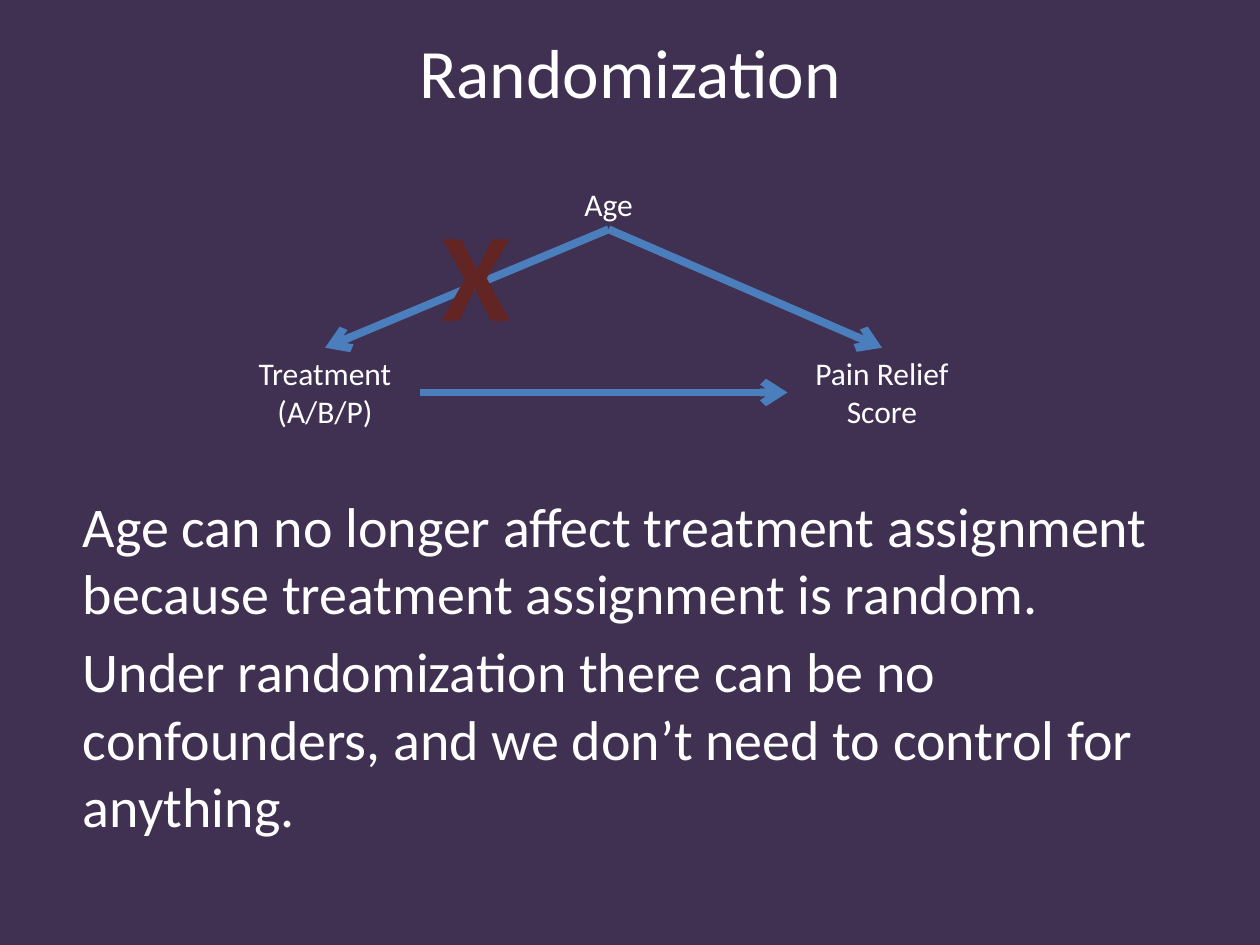
"""Build the Randomization slide: a causal triangle with one path crossed out."""
import pptx
import pptx.dml.color
import pptx.enum.shapes
import pptx.enum.text
import pptx.oxml.ns
import pptx.util
from lxml import etree

WHITE, PURPLE, BLUE, RED = "FFFFFF", "403152", "4B7EBC", "632523"
ALIGN = pptx.enum.text.PP_ALIGN
ANCHOR = pptx.enum.text.MSO_ANCHOR
TOP, LEFT, BOTTOM, RIGHT = range(4)

TITLE = "Randomization"
BODY = [
    "Age can no longer affect treatment assignment because treatment assignment is random.",
    "Under randomization there can be no confounders, and we don’t need to control for anything.",
]
NODE_W = 1.5
NODES = {
    "age": (["Age"], (4.08, 1.42, NODE_W, 0.4)),
    "treatment": (["Treatment", "(A/B/P)"], (1.83, 2.76, NODE_W, 0.71)),
    "outcome": (["Pain Relief Score"], (6.25, 2.76, NODE_W, 0.71)),
}
ARROWS = [
    ("age", BOTTOM, "outcome", TOP),
    ("age", BOTTOM, "treatment", TOP),
    ("treatment", RIGHT, "outcome", LEFT),
]


def color(value):
    return pptx.dml.color.RGBColor.from_string(value)


def place(shape, box):
    for name, value in zip(("left", "top", "width", "height"), box):
        setattr(shape, name, pptx.util.Inches(value))


def write(shape, lines, size, rgb=WHITE, align=ALIGN.CENTER, anchor=ANCHOR.TOP, before=0, bold=False):
    tf = shape.text_frame
    tf.word_wrap, tf.vertical_anchor = True, anchor
    tf.text = "\n".join(lines)
    for p in tf.paragraphs:
        p.alignment, p.space_before = align, pptx.util.Pt(before)
        font = p.runs[0].font
        for name, value in {"name": "Calibri", "size": pptx.util.Pt(size), "bold": bold}.items():
            setattr(font, name, value)
        font.color.rgb = color(rgb)


def add_text(s, lines, box, size, **formats):
    sp = s.shapes.add_textbox(*map(pptx.util.Inches, box))
    write(sp, lines, size, **formats)
    return sp


def add_arrow(s, start, start_side, end, end_side):
    c = s.shapes.add_connector(pptx.enum.shapes.MSO_CONNECTOR.STRAIGHT, 0, 0, 0, 0)
    c.begin_connect(start, start_side)
    c.end_connect(end, end_side)
    c.line.color.rgb, c.line.width = color(BLUE), pptx.util.Pt(4.5)
    qn = pptx.oxml.ns.qn
    etree.SubElement(c.line._get_or_add_ln(), qn("a:tailEnd"), type="arrow")
    etree.SubElement(c._element.spPr, qn("a:effectLst"))


def main():
    prs = pptx.Presentation()
    prs.slide_width, prs.slide_height = pptx.util.Inches(10), pptx.util.Inches(7.5)
    s = prs.slides.add_slide(prs.slide_layouts.get_by_name("Title Only"))
    s.background.fill.solid()
    s.background.fill.fore_color.rgb = color(PURPLE)

    place(s.shapes.title, (0.5, 0.17, 9, 0.78))
    write(s.shapes.title, [TITLE], 39.6, anchor=ANCHOR.MIDDLE)

    nodes = {key: add_text(s, lines, box, 18) for key, (lines, box) in NODES.items()}
    for start, start_side, end, end_side in ARROWS:
        add_arrow(s, nodes[start], start_side, nodes[end], end_side)

    add_text(s, BODY, (0.56, 3.85, 9.42, 3.32), 32, align=ALIGN.LEFT, before=6.4)
    cross = add_text(s, ["X"], (2.89, 1.5, 1.78, 1.31), 72, rgb=RED, bold=True)
    cross.text_frame.paragraphs[0].runs[0].font._element.set("spc", "50")
    prs.save("out.pptx")


if __name__ == "__main__":
    main()
